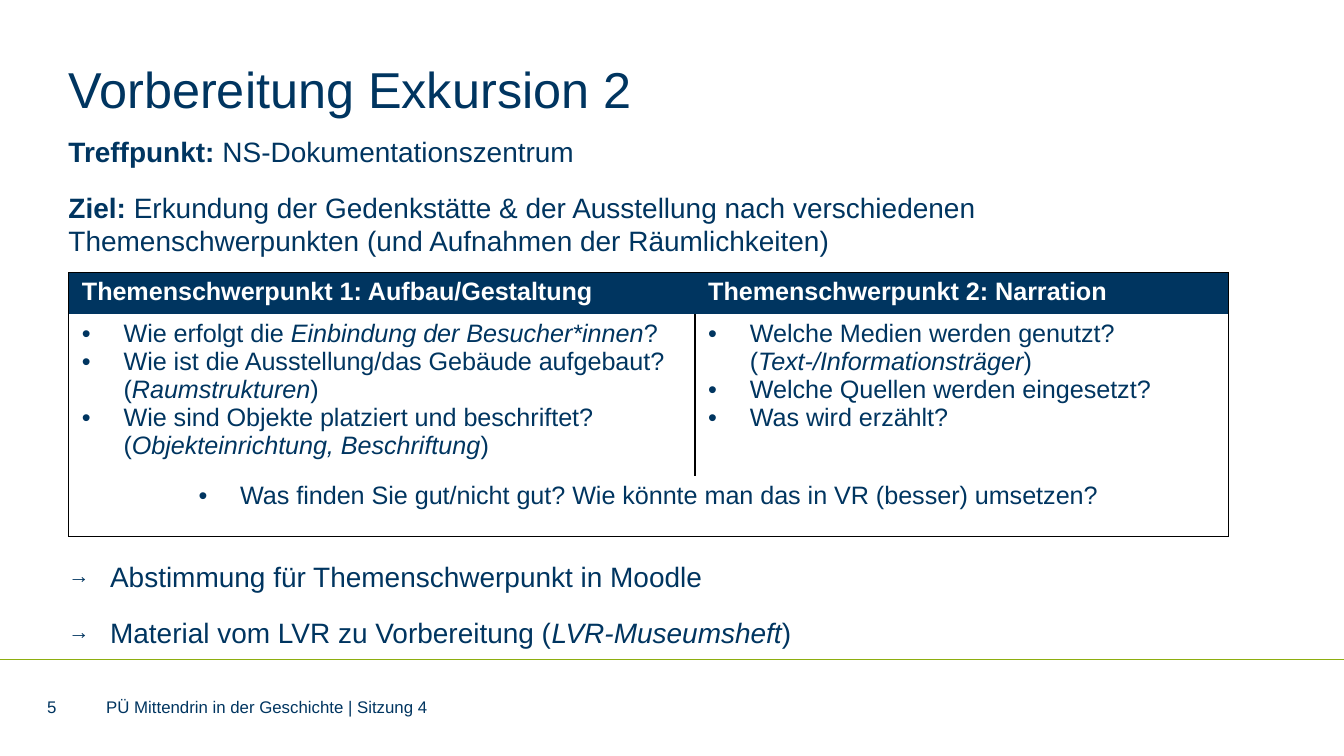
from typing import NamedTuple

from lxml import etree
from pptx import Presentation
from pptx.dml.color import RGBColor
from pptx.enum.shapes import MSO_CONNECTOR
from pptx.enum.text import MSO_ANCHOR, PP_ALIGN
from pptx.oxml.ns import qn
from pptx.util import Inches, Pt

NAVY = RGBColor(0x00, 0x35, 0x60)
WHITE = RGBColor(0xFF, 0xFF, 0xFF)
GREEN = RGBColor(0x8D, 0xAE, 0x10)
FONT = "Arial"
TOP, MIDDLE = MSO_ANCHOR.TOP, MSO_ANCHOR.MIDDLE
LEFT, CENTER = PP_ALIGN.LEFT, PP_ALIGN.CENTER
STRAIGHT = MSO_CONNECTOR.STRAIGHT
INDENT = Inches(0.31)


class Span(NamedTuple):
    text: str
    bold: bool = False
    italic: bool = False


class Line(NamedTuple):
    spans: list[Span]
    bullet: str = ""
    bullet_size: int = 100
    before: float = 0


def with_italic(before: str, italic: str, after: str) -> list[Span]:
    return [Span(before), Span(italic, italic=True), Span(after)]


def add_bullet(paragraph, line: Line) -> None:
    properties = paragraph._p.get_or_add_pPr()
    properties.set("marL", str(INDENT))
    properties.set("indent", str(-INDENT))
    etree.SubElement(properties, qn("a:buSzPct"), val=str(line.bullet_size * 1000))
    etree.SubElement(properties, qn("a:buFont"), typeface=FONT)
    etree.SubElement(properties, qn("a:buChar"), char=line.bullet)


def write_text(frame, lines: list[Line], *, size: float, color: RGBColor = NAVY,
               align=LEFT, spacing: float = 0, after: float = 0) -> None:
    for index, line in enumerate(lines):
        paragraph = frame.add_paragraph() if index else frame.paragraphs[0]
        paragraph.alignment = align
        if spacing:
            paragraph.line_spacing = Pt(spacing)
        if line.before:
            paragraph.space_before = Pt(line.before)
        if after:
            paragraph.space_after = Pt(after)
        if line.bullet:
            add_bullet(paragraph, line)
        for span in line.spans:
            run = paragraph.add_run()
            run.text = span.text
            run.font.name = FONT
            run.font.size = Pt(size)
            run.font.color.rgb = color
            run.font.bold = span.bold
            run.font.italic = span.italic


def add_text(slide, left: float, top: float, width: float, height: float,
             lines: list[Line], *, anchor=TOP, **text_format) -> None:
    shape = slide.shapes.add_textbox(Inches(left), Inches(top), Inches(width), Inches(height))
    frame = shape.text_frame
    frame.word_wrap = True
    frame.vertical_anchor = anchor
    frame.margin_left = frame.margin_top = frame.margin_right = frame.margin_bottom = 0
    write_text(frame, lines, **text_format)


def set_borders(cell, widths: dict[str, float]) -> None:
    """Draw the sides named in widths (points) and clear the others."""
    properties = cell._tc.get_or_add_tcPr()
    for side in "LRTB":
        width = widths.get(side, 0)
        border = etree.SubElement(properties, qn(f"a:ln{side}"), w=str(Pt(width)))
        if width:
            fill = etree.SubElement(border, qn("a:solidFill"))
            etree.SubElement(fill, qn("a:srgbClr"), val="000000")
        else:
            etree.SubElement(border, qn("a:noFill"))


def add_topic_table(slide) -> None:
    columns, rows = [4.66, 3.97], [0.31, 1.18, 0.45]
    headers = ["Themenschwerpunkt 1: Aufbau/Gestaltung", "Themenschwerpunkt 2: Narration"]
    questions = [
        [
            with_italic("Wie erfolgt die ", "Einbindung der Besucher*innen", "?"),
            with_italic("Wie ist die Ausstellung/das Gebäude aufgebaut? (", "Raumstrukturen", ")"),
            with_italic("Wie sind Objekte platziert und beschriftet? (",
                        "Objekteinrichtung, Beschriftung", ")"),
        ],
        [
            with_italic("Welche Medien werden genutzt? (", "Text-/Informationsträger", ")"),
            [Span("Welche Quellen werden eingesetzt?")],
            [Span("Was wird erzählt?")],
        ],
    ]
    shared = "Was finden Sie gut/nicht gut? Wie könnte man das in VR (besser) umsetzen?"

    table = slide.shapes.add_table(len(rows), len(columns), Inches(0.51), Inches(2.03),
                                   Inches(sum(columns)), Inches(sum(rows))).table
    for column, width in zip(table.columns, columns):
        column.width = Inches(width)
    for row, height in zip(table.rows, rows):
        row.height = Inches(height)

    # Outer frame on every side, one divider between the question cells
    borders = [
        [{"L": 0.5, "T": 0.5}, {"R": 0.5, "T": 0.5}],
        [{"L": 0.5, "R": 1}, {"L": 1, "R": 0.5}],
        [{"L": 0.5, "R": 0.5, "B": 0.5}, {"R": 0.5, "B": 0.5}],
    ]
    for row_index, row_borders in enumerate(borders):
        for column_index, widths in enumerate(row_borders):
            cell = table.cell(row_index, column_index)
            cell.margin_top = cell.margin_bottom = Inches(0.04)
            set_borders(cell, widths)
            if row_index == 0:
                cell.fill.solid()
                cell.fill.fore_color.rgb = NAVY
            else:
                cell.fill.background()

    for index, (header, entries) in enumerate(zip(headers, questions)):
        write_text(table.cell(0, index).text_frame, [Line([Span(header, bold=True)])],
                   size=13.5, color=WHITE)
        write_text(table.cell(1, index).text_frame,
                   [Line(spans, bullet="•") for spans in entries], size=13.5)
    table.cell(2, 0).merge(table.cell(2, 1))
    write_text(table.cell(2, 0).text_frame, [Line([Span(shared)], bullet="•")],
               size=13.5, align=CENTER)


def add_footer_rule(slide) -> None:
    rule = slide.shapes.add_connector(STRAIGHT, 0, Inches(4.91), Inches(10), Inches(4.91))
    rule.line.color.rgb = GREEN
    rule.line.width = Pt(0.5)
    etree.SubElement(rule._element.spPr, qn("a:effectLst"))


def main() -> None:
    presentation = Presentation()
    presentation.slide_width = Inches(10)
    presentation.slide_height = Inches(10 * 9 / 16)
    slide = presentation.slides.add_slide(presentation.slide_layouts[6])

    add_footer_rule(slide)

    # Title
    add_text(slide, 0.51, 0.43, 8.27, 0.51, [Line([Span("Vorbereitung Exkursion 2")])], size=27)

    # Body: the space before the first arrow leaves room for the table
    add_text(slide, 0.51, 1, 8.27, 3.86, [
        Line([Span("Treffpunkt: ", bold=True), Span("NS-Dokumentationszentrum")]),
        Line([Span("Ziel: ", bold=True),
              Span("Erkundung der Gedenkstätte & der Ausstellung nach verschiedenen "
                   "Themenschwerpunkten (und Aufnahmen der Räumlichkeiten)")]),
        Line([Span("Abstimmung für Themenschwerpunkt in Moodle")], "→", 75, before=150),
        Line(with_italic("Material vom LVR zu Vorbereitung (", "LVR-Museumsheft", ")"), "→", 75),
    ], size=15, spacing=18, after=12)

    # Footer
    for left, width, text in [(0.35, 0.28, "5"),
                              (0.79, 6.02, "PÜ Mittendrin in der Geschichte | Sitzung 4")]:
        add_text(slide, left, 5.2, width, 0.12, [Line([Span(text)])], size=9, anchor=MIDDLE)

    add_topic_table(slide)
    presentation.save("out.pptx")


if __name__ == "__main__":
    main()
